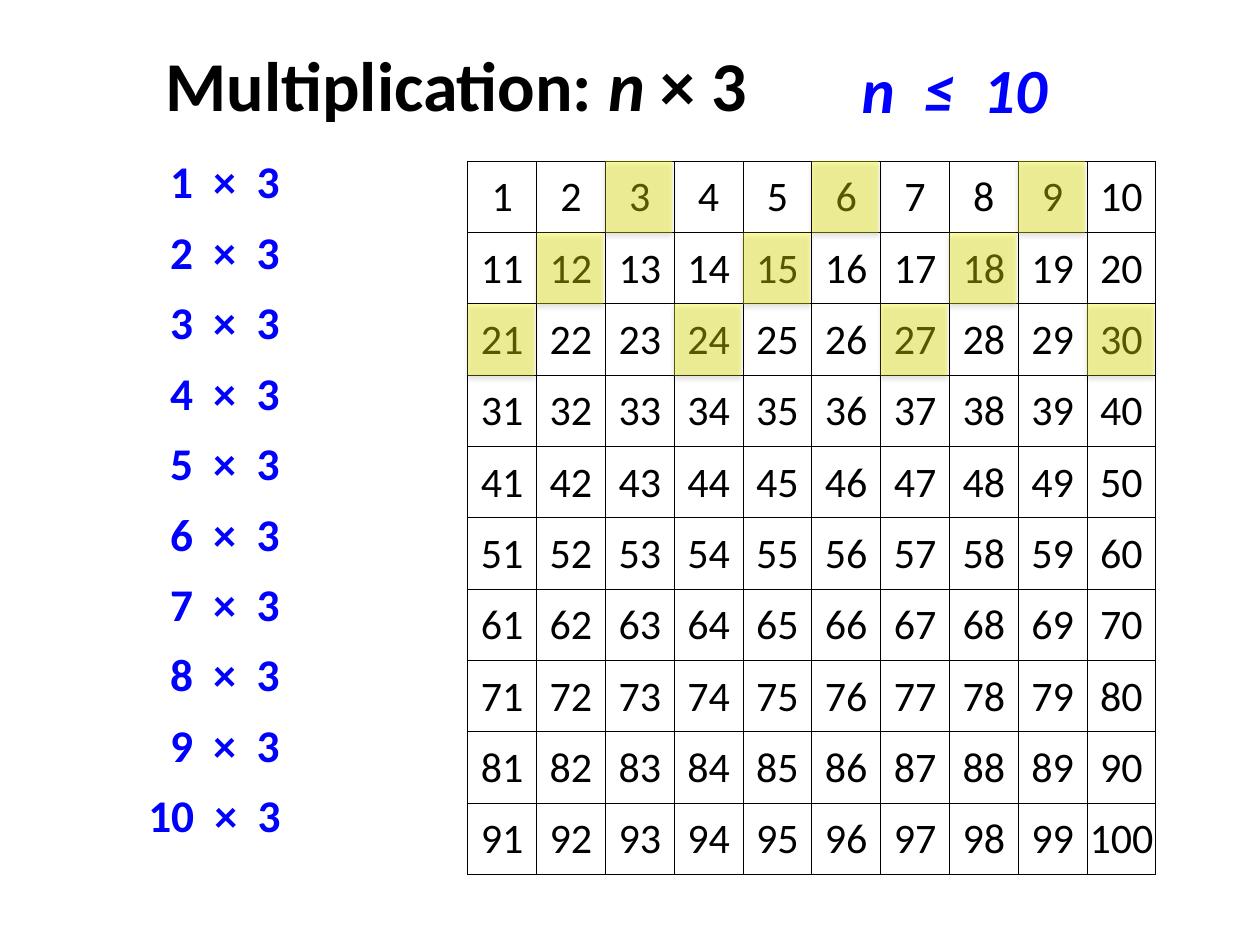
"""Build the slide on multiples of three with a highlighted hundred grid."""
import lxml.etree
import pptx
import pptx.dml.color
import pptx.enum.shapes
import pptx.enum.text
import pptx.oxml
import pptx.oxml.ns
import pptx.util

Cm = pptx.util.Cm
Pt = pptx.util.Pt
qn = pptx.oxml.ns.qn
ALIGN = pptx.enum.text.PP_ALIGN
ANCHOR = pptx.enum.text.MSO_ANCHOR

COLORS = {"ink": "000000", "accent": "0000FF", "highlight": "FFFF00"}
FONT = "Calibri"
FACTOR = 3
SIDE = 10
GRID_LEFT, GRID_TOP, GRID_WIDTH, GRID_HEIGHT = 9.43, 3.25, 13.87, 14.38


def rgb(name):
    return pptx.dml.color.RGBColor.from_string(COLORS[name])


def add_run(paragraph, text, size, color, bold=False, italic=False):
    run = paragraph.add_run()
    run.text = text
    run.font.name = FONT
    run.font.size = Pt(size)
    run.font.bold = bold
    run.font.italic = italic
    run.font.color.rgb = rgb(color)


def add_label(slide, box, pieces, size, color, align=ALIGN.LEFT,
              anchor=ANCHOR.TOP, line_spacing=1.0):
    frame = slide.shapes.add_textbox(*map(Cm, box)).text_frame
    frame.word_wrap = True
    frame.vertical_anchor = anchor
    paragraph = frame.paragraphs[0]
    paragraph.alignment = align
    paragraph.line_spacing = line_spacing
    for text, italic in pieces:
        add_run(paragraph, text, size, color, bold=True, italic=italic)


def add_borders(cell):
    properties = cell._tc.get_or_add_tcPr()
    for side in ("lnL", "lnR", "lnT", "lnB"):
        border = lxml.etree.SubElement(properties, qn(f"a:{side}"), w=str(Pt(0.5)))
        fill = lxml.etree.SubElement(border, qn("a:solidFill"))
        lxml.etree.SubElement(fill, qn("a:srgbClr"), val=COLORS["ink"])


def add_number(cell, number):
    cell.margin_left = cell.margin_right = cell.margin_top = Cm(0.03)
    cell.margin_bottom = 0
    cell.vertical_anchor = ANCHOR.MIDDLE
    add_borders(cell)
    cell.fill.background()
    paragraph = cell.text_frame.paragraphs[0]
    paragraph.alignment = ALIGN.CENTER
    add_run(paragraph, str(number), 24, "ink")


def add_hundred_grid(slide):
    box = map(Cm, (GRID_LEFT, GRID_TOP, GRID_WIDTH, GRID_HEIGHT))
    grid = slide.shapes.add_table(SIDE, SIDE, *box).table
    grid.first_row = grid.horz_banding = False
    for column in grid.columns:
        column.width = Cm(GRID_WIDTH / SIDE)
    for row in grid.rows:
        row.height = Cm(GRID_HEIGHT / SIDE)
    for index in range(SIDE * SIDE):
        add_number(grid.cell(*divmod(index, SIDE)), index + 1)


def add_soft_shadow(shape):
    effects = shape._element.spPr.get_or_add_effectLst() if hasattr(
        shape._element.spPr, "get_or_add_effectLst") else lxml.etree.SubElement(
        shape._element.spPr, qn("a:effectLst"))
    shadow = lxml.etree.SubElement(
        effects, qn("a:outerShdw"), blurRad=str(Pt(3.1)), dist=str(Pt(1.8)),
        dir="5400000", rotWithShape="0")
    color = lxml.etree.SubElement(shadow, qn("a:srgbClr"), val=COLORS["ink"])
    lxml.etree.SubElement(color, qn("a:alpha"), val="35000")


def add_highlight(slide, number):
    row, column = divmod(number - 1, SIDE)
    highlight = slide.shapes.add_shape(
        pptx.enum.shapes.MSO_SHAPE.RECTANGLE,
        Cm(GRID_LEFT + column * GRID_WIDTH / SIDE),
        Cm(GRID_TOP + row * GRID_HEIGHT / SIDE), Cm(1.35), Cm(1.45))
    highlight.fill.solid()
    highlight.fill.fore_color.rgb = rgb("highlight")
    color = highlight._element.spPr.find(qn("a:solidFill"))[0]
    lxml.etree.SubElement(color, qn("a:alpha"), val="34000")
    highlight.line.fill.background()
    add_soft_shadow(highlight)


def add_product(slide, multiplier):
    left = 3.18 if multiplier < 10 else 2.74
    top = 2.97 + (multiplier - 1) * 1.42
    add_label(slide, (left, top, 5.44, 1.4),
              [(f"{multiplier}  ×  {FACTOR}", False)], 25.9, "accent")


def main():
    presentation = pptx.Presentation()
    presentation.slide_width, presentation.slide_height = Cm(25.4), Cm(19.05)
    slide = presentation.slides.add_slide(presentation.slide_layouts[6])
    add_label(slide, (2.01, 0.64, 14.38, 2.08),
              [("Multiplication: ", False), ("n", True), (f" × {FACTOR}", False)],
              40, "ink", align=ALIGN.CENTER, anchor=ANCHOR.MIDDLE)
    add_label(slide, (17.12, 0.58, 5.44, 2.29), [("n  ≤  10", True)],
              36, "accent", line_spacing=1.2)
    add_hundred_grid(slide)
    for multiplier in range(1, SIDE + 1):
        add_highlight(slide, multiplier * FACTOR)
    for multiplier in range(1, SIDE + 1):
        add_product(slide, multiplier)
    presentation.save("out.pptx")


if __name__ == "__main__":
    main()
